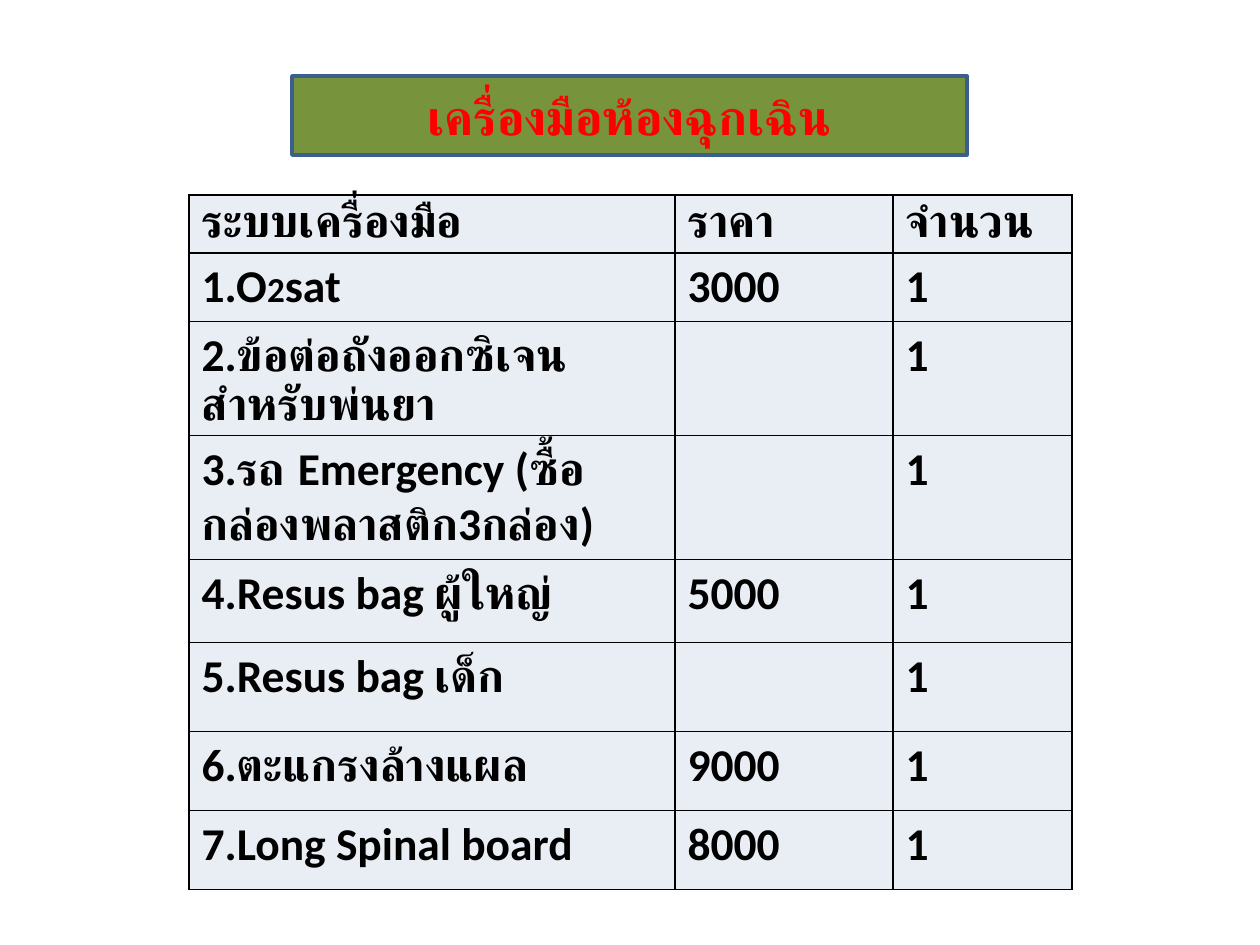
from lxml.etree import SubElement
from pptx import Presentation
from pptx.dml.color import RGBColor as RGB
from pptx.enum.shapes import MSO_SHAPE as Shape
from pptx.enum.text import MSO_ANCHOR as Anchor, PP_ALIGN as Align
from pptx.oxml.ns import qn
from pptx.util import Pt

EMU_PER_PX = 914400 / 126
COLORS = {
    "text": "000000", "title": "FF0000", "banner": "77933C",
    "banner_line": "3A5F8C", "cell": "E9EDF4", "border": "000000",
}


def px(length):
    return round(length * EMU_PER_PX)


def color(name):
    return RGB.from_string(COLORS[name])


class SlideBuilder:
    font_name = "Calibri"
    table_size = 26
    small_size = 20
    title_size = 28

    def __init__(self, slide):
        self.slide = slide

    def style(self, run, size, color_name):
        run.font.name = self.font_name
        run.font.size = Pt(size)
        run.font.bold = True
        run.font.color.rgb = color(color_name)

    def banner(self, text, left, top, width, height):
        banner = self.slide.shapes.add_shape(
            Shape.RECTANGLE, px(left), px(top), px(width), px(height))
        banner.shadow.inherit = False
        banner.fill.solid()
        banner.fill.fore_color.rgb = color("banner")
        banner.line.color.rgb = color("banner_line")
        banner.line.width = Pt(2)
        frame = banner.text_frame
        frame.word_wrap = True
        frame.vertical_anchor = Anchor.MIDDLE
        frame.text = text
        frame.paragraphs[0].alignment = Align.CENTER
        self.style(frame.paragraphs[0].runs[0], self.title_size, "title")

    def borders(self, cell):
        properties = cell._tc.get_or_add_tcPr()
        for side in ("a:lnL", "a:lnR", "a:lnT", "a:lnB"):
            line = SubElement(properties, qn(side), w=str(Pt(1)))
            fill = SubElement(line, qn("a:solidFill"))
            SubElement(fill, qn("a:srgbClr"), val=COLORS["border"])

    def cell(self, cell, parts):
        """Fill a cell with (text, size) parts."""
        self.borders(cell)
        cell.fill.solid()
        cell.fill.fore_color.rgb = color("cell")
        paragraph = cell.text_frame.paragraphs[0]
        for text, size in parts:
            run = paragraph.add_run()
            run.text = text
            self.style(run, size, "text")

    def table(self, rows, left, top, widths, heights):
        table = self.slide.shapes.add_table(
            len(rows), len(widths), px(left), px(top),
            px(sum(widths)), px(sum(heights))).table
        table.first_row = table.horz_banding = False
        for column, width in zip(table.columns, widths):
            column.width = px(width)
        for row, height, values in zip(table.rows, heights, rows):
            row.height = px(height)
            for cell, value in zip(row.cells, values):
                if isinstance(value, str):
                    value = [(value, self.table_size)] if value else []
                self.cell(cell, value)


def main():
    deck = Presentation()
    deck.slide_width, deck.slide_height = px(1260), px(945)
    builder = SlideBuilder(deck.slides.add_slide(deck.slide_layouts[6]))

    # Equipment list: name, price, quantity
    normal, small = builder.table_size, builder.small_size
    oxygen_meter = [("1.O", normal), ("2", small), ("sat", normal)]
    equipment = [
        ("ระบบเครื่องมือ", "ราคา", "จำนวน"),
        (oxygen_meter, "3000", "1"),
        ("2.ข้อต่อถังออกซิเจนสำหรับพ่นยา", "", "1"),
        ("3.รถ Emergency (ซื้อกล่องพลาสติก3กล่อง)", "", "1"),
        ("4.Resus bag ผู้ใหญ่", "5000", "1"),
        ("5.Resus bag เด็ก", "", "1"),
        ("6.ตะแกรงล้างแผล", "9000", "1"),
        ("7.Long Spinal board", "8000", "1"),
    ]
    builder.table(equipment, 189, 195, widths=[486, 218, 179],
                  heights=[52] * 4 + [83, 89, 79, 79])

    # Title banner
    builder.banner("เครื่องมือห้องฉุกเฉิน", 292, 76, 675, 79)

    deck.save("out.pptx")


if __name__ == "__main__":
    main()
